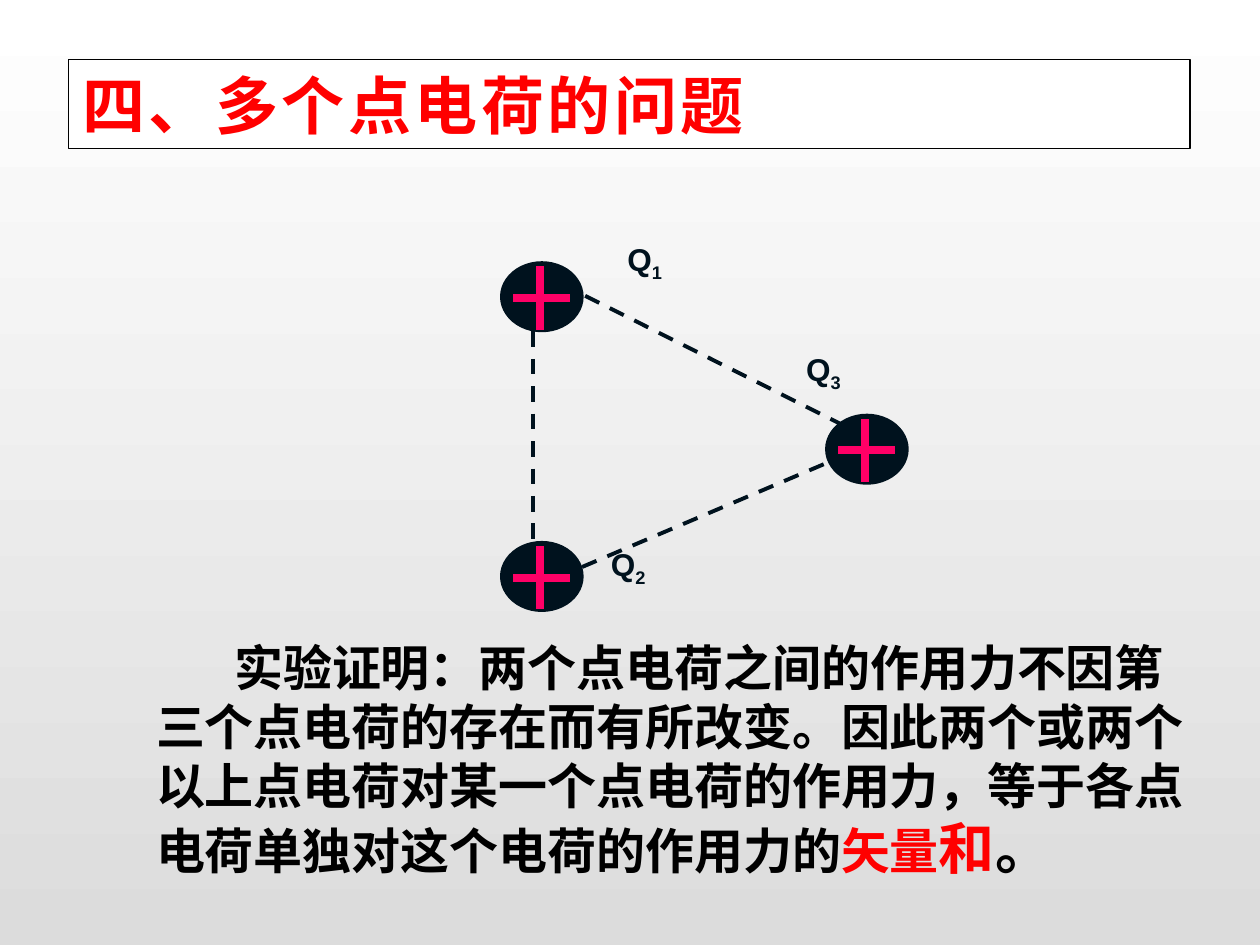
"""Slide on the forces among several point charges."""
import pptx
import pptx.util
import pptx.dml.color
import pptx.enum.dml
import pptx.enum.shapes
import pptx.enum.text
import pptx.oxml.ns
import lxml.etree

COLORS = {"ink": "00121E", "plus": "FF0066", "accent": "FF0000",
          "text": "000000", "top": "FFFFFF", "bottom": "DCDCDC"}
RGB = {name: pptx.dml.color.RGBColor.from_string(value) for name, value in COLORS.items()}
CJK = "Noto Sans CJK SC"

deck = pptx.Presentation()
deck.slide_width = pptx.util.Inches(10)
deck.slide_height = pptx.util.Inches(7.5)
col = deck.slide_width / 100
row = deck.slide_height / 75
slide = deck.slides.add_slide(deck.slide_layouts[6])


def add_run(paragraph, text, size, color, font="Arial"):
    run = paragraph.add_run()
    run.text = text
    run.font.size = pptx.util.Pt(size)
    run.font.bold = True
    run.font.name = font
    run.font.color.rgb = RGB[color]
    props = run.font._element
    east_asian = lxml.etree.Element(pptx.oxml.ns.qn("a:ea"), typeface=CJK)
    props.find(pptx.oxml.ns.qn("a:latin")).addnext(east_asian)
    return props


def add_line(x1, y1, x2, y2, color, width, dashed=False):
    line = slide.shapes.add_connector(
        pptx.enum.shapes.MSO_CONNECTOR.STRAIGHT,
        round(x1 * col), round(y1 * row), round(x2 * col), round(y2 * row))
    line.line.color.rgb = RGB[color]
    line.line.width = pptx.util.Pt(width)
    if dashed:
        line.line.dash_style = pptx.enum.dml.MSO_LINE.DASH
    else:
        line._element.spPr.find(pptx.oxml.ns.qn("a:ln")).set("cap", "sq")
    lxml.etree.SubElement(line._element.spPr, pptx.oxml.ns.qn("a:effectLst"))


backdrop = slide.background.fill
backdrop.gradient()
backdrop.gradient_angle = 270
for stop, shade, position in zip(backdrop.gradient_stops, ("top", "bottom"), (0, 1)):
    stop.color.rgb = RGB[shade]
    stop.position = position

heading = slide.shapes.add_shape(
    pptx.enum.shapes.MSO_SHAPE.RECTANGLE,
    round(5.45 * col), round(4.7 * row), round(89 * col), round(7.1 * row))
heading.shadow.inherit = False
heading.fill.solid()
heading.fill.fore_color.rgb = RGB["top"]
heading.line.color.rgb = RGB["text"]
heading.line.width = pptx.util.Pt(0.75)
heading_frame = heading.text_frame
heading_frame.vertical_anchor = pptx.enum.text.MSO_ANCHOR.MIDDLE
heading_frame.margin_left = round(1.1 * col)
heading_frame.margin_right = round(0.8 * col)
heading_frame.margin_top = heading_frame.margin_bottom = round(0.4 * row)
heading_frame.paragraphs[0].alignment = pptx.enum.text.PP_ALIGN.LEFT
add_run(heading_frame.paragraphs[0], "四、多个点电荷的问题", 36, "accent", CJK).set("spc", "200")

for bond in ((44.5, 22.5, 70, 35.3), (46.2, 45, 66.9, 36.2), (42.3, 26.3, 42.3, 43.9)):
    add_line(*bond, "ink", 2.25, dashed=True)

charges = (("1", 39.75, 20.8, 48.8, 18.6),
           ("2", 39.75, 43, 47.5, 42.8),
           ("3", 65.55, 32.9, 63, 27.3))
for number, x, y, label_x, label_y in charges:
    charge = slide.shapes.add_shape(
        pptx.enum.shapes.MSO_SHAPE.OVAL,
        round(x * col), round(y * row), round(6.5 * col), round(5.5 * row))
    charge.shadow.inherit = False
    charge.fill.solid()
    charge.fill.fore_color.rgb = RGB["ink"]
    charge.line.color.rgb = RGB["ink"]
    charge.line.width = pptx.util.Pt(1)
    add_line(x + 3.1, y + 5.05, x + 3.1, y + 0.65, "plus", 4.5)
    add_line(x + 1.3, y + 2.85, x + 5.15, y + 2.85, "plus", 4.5)

    label = slide.shapes.add_textbox(
        round(label_x * col), round(label_y * row), round(4.9 * col), round(4 * row))
    label.text_frame.word_wrap = False
    caption = label.text_frame.paragraphs[0]
    add_run(caption, "Q", 18, "ink")
    add_run(caption, number, 18, "ink").set("baseline", "-25000")

conclusion = slide.shapes.add_textbox(
    round(11.4 * col), round(50.1 * row), round(85.1 * col), round(32.9 * row))
conclusion.text_frame.word_wrap = True
statement = conclusion.text_frame.paragraphs[0]
statement.line_spacing = 1.0
statement.space_before = pptx.util.Pt(3)
statement._p.get_or_add_pPr().set("indent", str(round(6.2 * col)))
for text, size, color in (
        ("实验证明：两个点电荷之间的作用力不因第三个点电荷的存在而有所改变。"
         "因此两个或两个以上点电荷对某一个点电荷的作用力，"
         "等于各点电荷单独对这个电荷的作用力的", 28, "text"),
        ("矢量", 28, "accent"), ("和", 32, "accent"), ("。", 32, "text")):
    add_run(statement, text, size, color)

deck.save("out.pptx")
